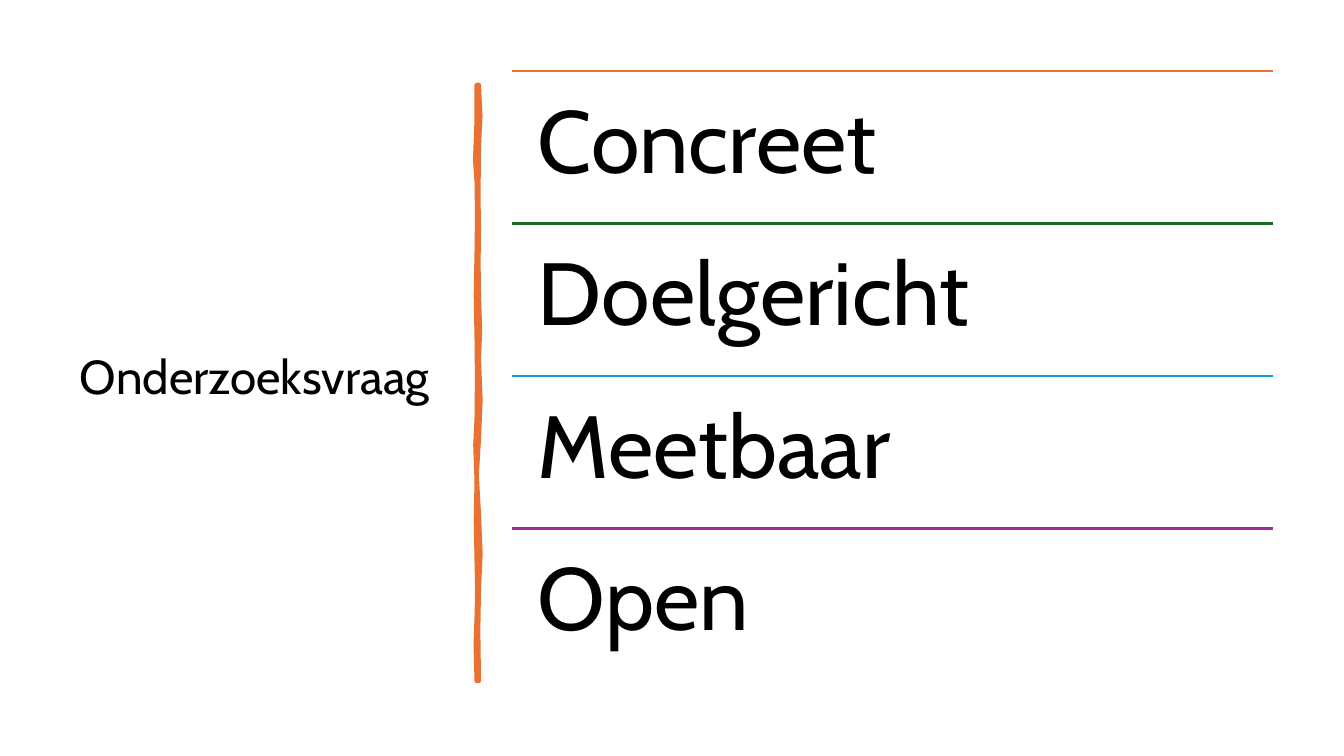
from pptx import Presentation, util as u
from pptx.dml.color import RGBColor
from pptx.enum import shapes, text
from pptx.oxml.ns import qn
from lxml import etree

PX = 914400 / 100.8
BLACK = RGBColor(0x00, 0x00, 0x00)
ORANGE = RGBColor(0xE9, 0x71, 0x32)
GREEN = RGBColor(0x19, 0x6B, 0x24)
BLUE = RGBColor(0x0F, 0x9E, 0xD5)
PURPLE = RGBColor(0xA0, 0x2B, 0x93)
ROWS = [("Concreet", ORANGE), ("Doelgericht", GREEN),
        ("Meetbaar", BLUE), ("Open", PURPLE)]

# Edges of the brush stroke: x in tenths of a px, y in px
RIGHT = [(38, 0), (53, 31), (38, 62), (33, 112), (38, 143), (34, 177),
         (38, 211), (50, 245), (38, 274), (54, 315), (38, 354), (16, 390),
         (38, 429), (54, 469), (38, 504), (31, 545), (38, 596)]
LEFT = [(18, 596), (8, 560), (18, 533), (24, 505), (18, 476), (10, 435),
        (18, 396), (5, 360), (18, 333), (22, 293), (18, 253), (10, 210),
        (18, 167), (23, 130), (18, 97), (2, 75), (18, 35), (18, 0)]


def emu(px):
    return u.Emu(round(px * PX))


def label(slide, words, box, size, inset, anchor):
    frame = slide.shapes.add_textbox(*map(emu, box)).text_frame
    form = {"word_wrap": True, "vertical_anchor": anchor,
            "auto_size": text.MSO_AUTO_SIZE.NONE}
    form.update({"margin_" + side: emu(inset)
                 for side in ("left", "top", "right", "bottom")})
    for name, value in form.items():
        setattr(frame, name, value)
    para = frame.paragraphs[0]
    para.line_spacing = 0.9
    run = para.add_run()
    run.text = words
    for name, value in {"name": "Cabin", "size": u.Pt(size)}.items():
        setattr(run.font, name, value)
    run.font.color.rgb = BLACK


def brush(slide, left, top):
    """Draw the rough upright stroke that parts title and list."""
    form = slide.shapes.build_freeform(*RIGHT[0], scale=(PX / 10, PX))
    form.add_line_segments(RIGHT[1:] + LEFT, close=True)
    shape = form.convert_to_shape(emu(left), emu(top))
    shape.shadow.inherit = False
    shape.fill.solid()
    shape.fill.fore_color.rgb = ORANGE
    shape.line.color.rgb = ORANGE
    shape.line.width = u.Pt(3.25)


def rule(slide, left, top, width, color):
    line = slide.shapes.add_connector(
        shapes.MSO_CONNECTOR.STRAIGHT,
        *map(emu, (left, top, left + width, top)))
    line.line.color.rgb = color
    line.line.width = u.Pt(1.5)
    etree.SubElement(line._element.spPr, qn("a:effectLst"))


def ruled_list(slide, left, top, width, height):
    step = height / len(ROWS)
    for i, (words, color) in enumerate(ROWS):
        y = top + i * step
        rule(slide, left, y, width, color)
        label(slide, words, (left, y, width, step), 63, 26,
              text.MSO_ANCHOR.TOP)


def main():
    deck = Presentation()
    deck.slide_width, deck.slide_height = emu(1344), emu(756)
    slide = deck.slides.add_slide(deck.slide_layouts[6])
    label(slide, "Onderzoeksvraag", (70, 71, 377, 616), 34, 10,
          text.MSO_ANCHOR.MIDDLE)
    brush(slide, 475, 85)
    ruled_list(slide, 512, 71, 761, 610)
    deck.save("out.pptx")


if __name__ == "__main__":
    main()
